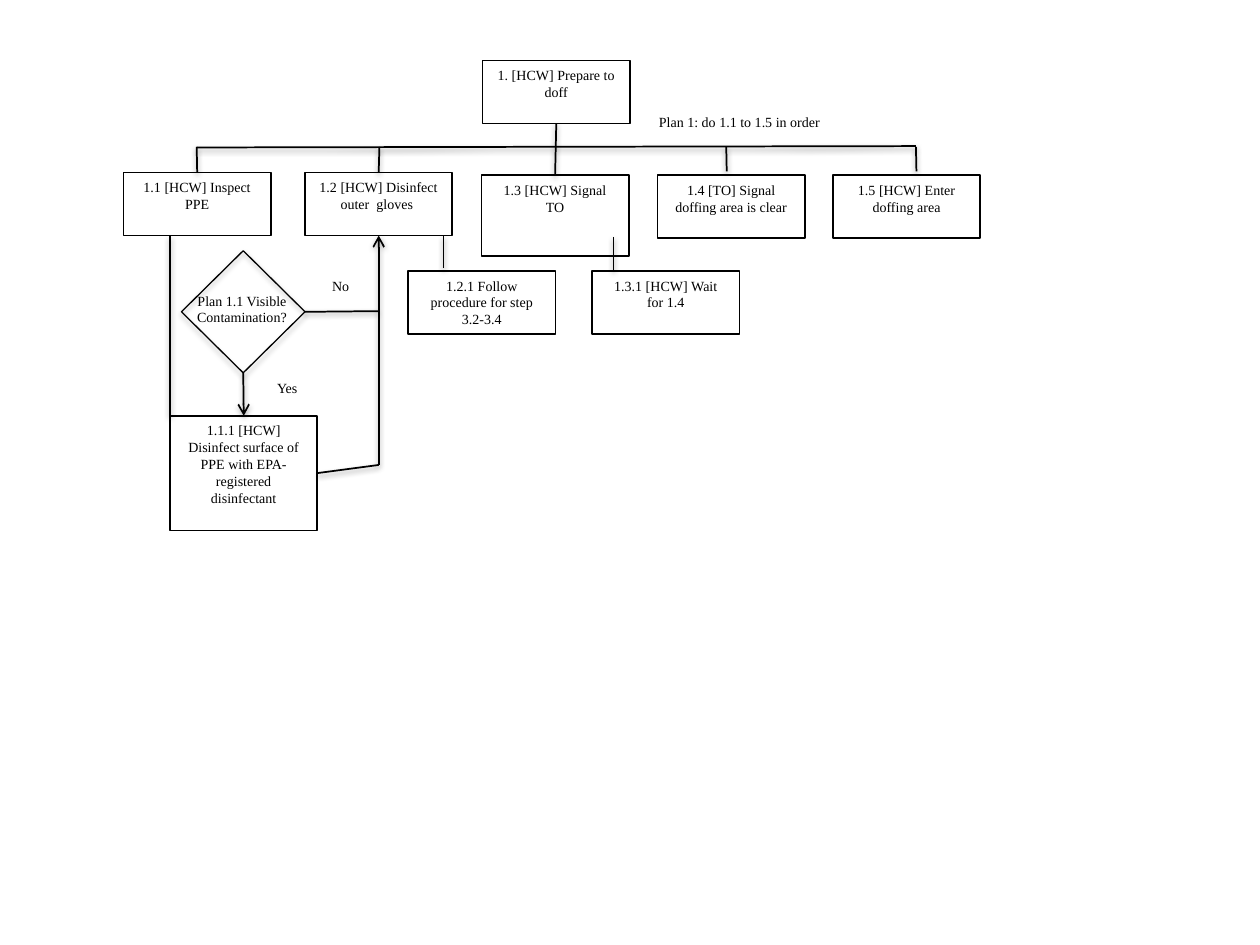
from pptx import Presentation
from pptx.dml.color import RGBColor
from pptx.enum.shapes import MSO_CONNECTOR, MSO_SHAPE
from pptx.enum.text import MSO_ANCHOR, PP_ALIGN
from pptx.oxml import parse_xml
from pptx.oxml.ns import nsdecls, qn
from pptx.util import Pt

BLACK = RGBColor(0x00, 0x00, 0x00)
WHITE = RGBColor(0xFF, 0xFF, 0xFF)
FONT = "Times New Roman"
BOX_WIDTH, BOX_HEIGHT = 84.2, 36
TOP, LEFT, BOTTOM, RIGHT = range(4)


def write_text(shape, text, align=PP_ALIGN.CENTER):
    frame = shape.text_frame
    frame.word_wrap = True
    frame.vertical_anchor = MSO_ANCHOR.TOP
    frame.text = text
    para = frame.paragraphs[0]
    para.alignment = align
    for span in para.runs:
        span.font.name = FONT
        span.font.size = Pt(8)
        span.font.color.rgb = BLACK


def set_outline(shape, width):
    shape.line.color.rgb = BLACK
    shape.line.width = Pt(width)


def add_soft_shadow(shape, distance, opacity):
    properties = shape._element.spPr
    for effects in properties.findall(qn("a:effectLst")):
        properties.remove(effects)
    properties.append(parse_xml(
        f'<a:effectLst {nsdecls("a")}>'
        f'<a:outerShdw blurRad="{Pt(3.1)}" dist="{Pt(distance)}" dir="5400000" rotWithShape="0">'
        f'<a:srgbClr val="{BLACK}"><a:alpha val="{opacity * 1000}"/></a:srgbClr>'
        '</a:outerShdw></a:effectLst>'))


def add_task(slide, text, left, top, height=BOX_HEIGHT):
    box = slide.shapes.add_shape(
        MSO_SHAPE.RECTANGLE, Pt(left), Pt(top), Pt(BOX_WIDTH), Pt(height))
    box.shadow.inherit = False
    box.fill.solid()
    box.fill.fore_color.rgb = WHITE
    set_outline(box, 1)
    write_text(box, text)
    return box


def add_label(slide, text, left, top, width, height=17.3, align=PP_ALIGN.CENTER):
    label = slide.shapes.add_textbox(Pt(left), Pt(top), Pt(width), Pt(height))
    write_text(label, text, align)


def add_line(slide, start, end, begin_joint=None, end_joint=None, arrow=False):
    line = slide.shapes.add_connector(
        MSO_CONNECTOR.STRAIGHT, *(Pt(value) for value in (*start, *end)))
    if begin_joint:
        line.begin_connect(*begin_joint)
    if end_joint:
        line.end_connect(*end_joint)
    set_outline(line, 1)
    if arrow:
        line._element.spPr.find(qn("a:ln")).append(
            parse_xml(f'<a:tailEnd {nsdecls("a")} type="arrow"/>'))
    add_soft_shadow(line, 1.6, 38)


def draw_hierarchy(slide, left, top):
    root = add_task(slide, "1. [HCW] Prepare to doff", left + 205.2, top)
    inspect = add_task(slide, "1.1 [HCW] Inspect PPE", left, top + 64)
    disinfect = add_task(slide, "1.2 [HCW] Disinfect outer  gloves ", left + 103.7, top + 64)
    signal = add_task(slide, "1.3 [HCW] Signal TO", left + 204.5, top + 65.5, 46.1)
    add_task(slide, "1.4 [TO] Signal doffing area is clear", left + 305.2, top + 65.5)
    add_task(slide, "1.5 [HCW] Enter doffing area", left + 405.4, top + 65.5)
    add_task(slide, "1.2.1 Follow procedure for step 3.2-3.4", left + 162.7, top + 120.2)
    add_task(slide, "1.3.1 [HCW] Wait for 1.4", left + 267.8, top + 120.2)

    bus = top + 49.3
    add_line(slide, (left + 452.8, bus - 0.4), (left + 41.8, bus + 0.4))
    add_line(slide, (0, 0), (0, 0), (root, BOTTOM), (signal, TOP))
    for x, child in ((41.8, inspect), (146.2, disinfect)):
        add_line(slide, (left + x, bus), (left + x, top + 64), end_joint=(child, TOP))
    for x in (344.4, 452.8):
        add_line(slide, (left + x, bus), (left + x + 0.3, bus + 14))
    add_line(slide, (left + 182.8, top + 100), (left + 182.8, top + 118.8))
    add_line(slide, (left + 280, top + 100.8), (left + 280, top + 120.2))
    add_label(slide, "Plan 1: do 1.1 to 1.5 in order",
              left + 298.8, top + 26.6, 181.4, align=PP_ALIGN.LEFT)
    return disinfect


def draw_contamination_check(slide, left, top, next_task):
    check = slide.shapes.add_shape(
        MSO_SHAPE.DIAMOND, Pt(left + 6.5), Pt(top + 8.7), Pt(70.6), Pt(69.8))
    check.fill.background()
    set_outline(check, 0.75)
    add_soft_shadow(check, 1.8, 35)
    add_label(slide, "Plan 1.1 Visible Contamination?", left + 5.8, top + 28.8, 70.6, 26.6)
    surface = add_task(
        slide, "1.1.1 [HCW] Disinfect surface of PPE with EPA-registered disinfectant",
        left, top + 103, 65.5)

    merge = left + 119.2
    corner = (merge, top + 131.1)
    add_line(slide, (0, 0), (0, 0), (check, BOTTOM), (surface, TOP), arrow=True)
    add_line(slide, (0, 0), corner, begin_joint=(surface, RIGHT))
    add_line(slide, corner, (0, 0), end_joint=(next_task, BOTTOM), arrow=True)
    add_line(slide, (0, 0), (merge, top + 43.2), begin_joint=(check, RIGHT))
    add_line(slide, (left, top), (left, top + 103))
    add_label(slide, "No", left + 84.2, top + 20.2, 26.6)
    add_label(slide, "Yes", left + 50.4, top + 78.5, 33.1)


def main():
    deck = Presentation()
    deck.slide_width, deck.slide_height = Pt(720), Pt(540)
    slide = deck.slides.add_slide(deck.slide_layouts[6])
    disinfect = draw_hierarchy(slide, 70.6, 34.6)
    draw_contamination_check(slide, 97.2, 134.6, disinfect)
    deck.save("out.pptx")


if __name__ == "__main__":
    main()
